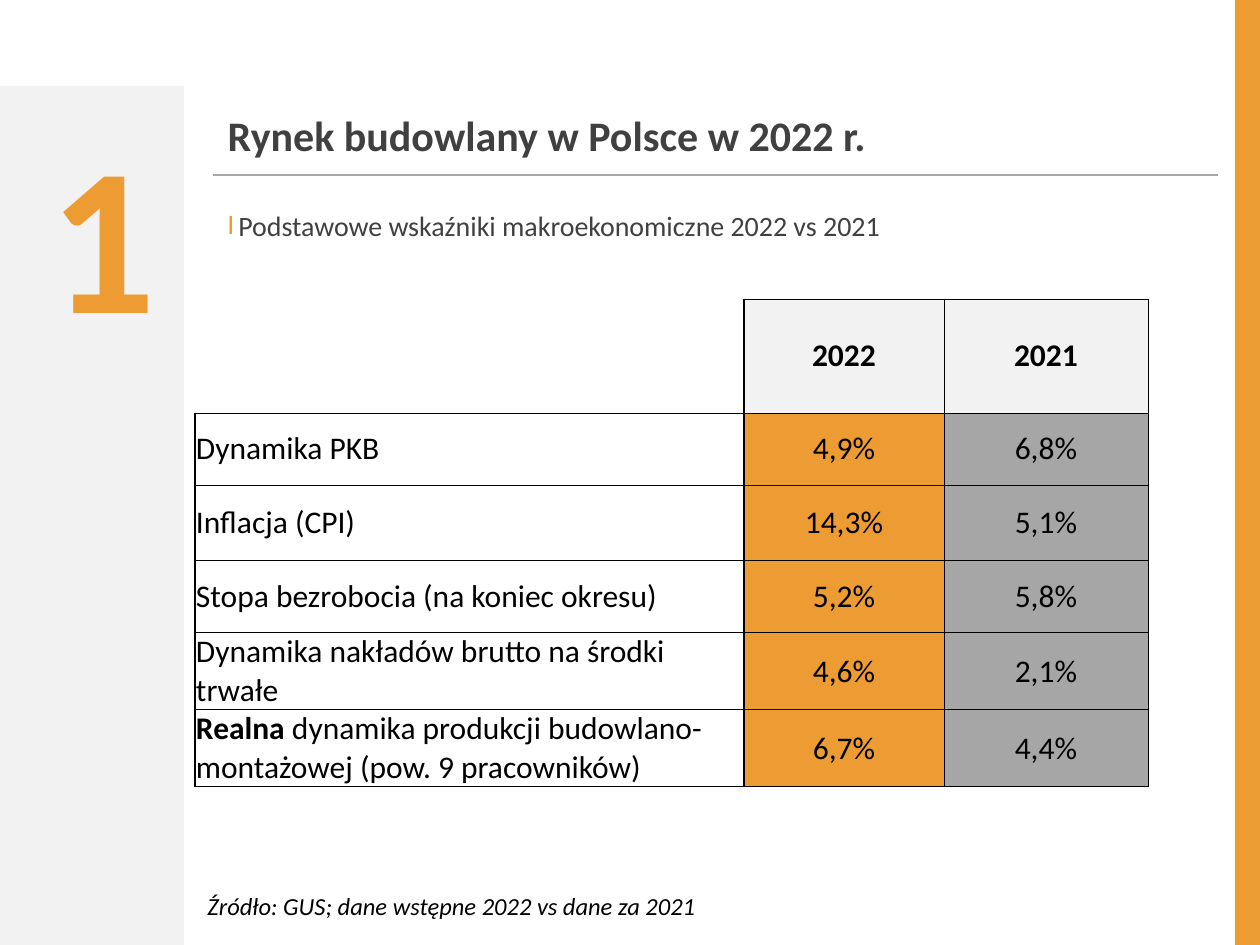
from dataclasses import dataclass

from lxml.etree import SubElement
from pptx import Presentation
from pptx.dml.color import RGBColor
from pptx.enum.shapes import MSO_CONNECTOR, MSO_SHAPE
from pptx.enum.text import MSO_ANCHOR, PP_ALIGN
from pptx.oxml import parse_xml
from pptx.oxml.ns import nsdecls, qn
from pptx.util import Emu, Pt

EMU_PER_PX = 914400 / 126


def px(length):
    return Emu(round(length * EMU_PER_PX))


@dataclass(frozen=True)
class Theme:
    font: str = "Calibri"
    accent: str = "ED9B33"
    panel: str = "F2F2F2"
    grey: str = "A6A6A6"
    heading: str = "404040"
    black: str = "000000"
    number_size: int = 120
    title_size: int = 24
    table_size: int = 18
    body_size: int = 16
    source_size: int = 14


class SlideBuilder:
    def __init__(self, deck, theme):
        self.theme = theme
        self.page = deck.slides.add_slide(deck.slide_layouts[5])

    def style(self, para, size, color, bold=False, italic=False, align=PP_ALIGN.LEFT):
        para.alignment = align
        font = para.font
        font.name = self.theme.font
        font.size = Pt(size)
        font.bold = bold
        font.italic = italic
        font.color.rgb = RGBColor.from_string(color)

    def title(self, text, left, top, width, height):
        box = self.page.shapes.title
        box.left, box.top, box.width, box.height = map(px, (left, top, width, height))
        frame = box.text_frame
        frame.text = text
        frame.vertical_anchor = MSO_ANCHOR.MIDDLE
        self.style(frame.paragraphs[0], self.theme.title_size, self.theme.heading, bold=True)

    def band(self, left, top, width, height, color):
        shape = self.page.shapes.add_shape(
            MSO_SHAPE.RECTANGLE, *map(px, (left, top, width, height)))
        shape.shadow.inherit = False
        shape.fill.solid()
        shape.fill.fore_color.rgb = RGBColor.from_string(color)
        shape.line.fill.background()

    def rule(self, left, right, top):
        line = self.page.shapes.add_connector(
            MSO_CONNECTOR.STRAIGHT, *map(px, (left, top, right, top)))
        line.line.color.rgb = RGBColor.from_string(self.theme.grey)
        line.line.width = Pt(0.75)
        SubElement(line._element.spPr, qn("a:effectLst"))

    def text(self, text, left, top, width, height, size, color, bullet=None, **look):
        box = self.page.shapes.add_textbox(*map(px, (left, top, width, height)))
        frame = box.text_frame
        frame.word_wrap = True
        para = frame.paragraphs[0]
        para.text = text
        if bullet:
            self.bullet(para, bullet)
        self.style(para, size, color, **look)

    def bullet(self, para, character):
        properties = para._p.get_or_add_pPr()
        indent = px(11)
        properties.set("marL", str(indent))
        properties.set("indent", str(-indent))
        color = SubElement(properties, qn("a:buClr"))
        SubElement(color, qn("a:srgbClr"), val=self.theme.accent)
        SubElement(properties, qn("a:buFont"), typeface=self.theme.font)
        SubElement(properties, qn("a:buChar"), char=character)

    def borders(self, cell, **widths):
        properties = cell._tc.get_or_add_tcPr()
        for position, side in enumerate("LRTB"):
            width = widths.get(side, 0)
            paint = (f'<a:solidFill><a:srgbClr val="{self.theme.black}"/></a:solidFill>'
                     if width else "<a:noFill/>")
            properties.insert(position, parse_xml(
                f'<a:ln{side} {nsdecls("a")} w="{Pt(width)}">{paint}</a:ln{side}>'))

    def cell(self, cell, spans, fill, bold, align):
        cell.vertical_anchor = MSO_ANCHOR.MIDDLE
        cell.margin_left = cell.margin_right = px(1)
        cell.margin_top = cell.margin_bottom = 0
        if fill:
            cell.fill.solid()
            cell.fill.fore_color.rgb = RGBColor.from_string(fill)
        else:
            cell.fill.background()
        para = cell.text_frame.paragraphs[0]
        self.style(para, self.theme.table_size, self.theme.black, bold=bold, align=align)
        for text, strong in spans:
            span = para.add_run()
            span.text = text
            if strong:
                span.font.bold = True

    def table(self, rows, left, top, widths, heights):
        frame = self.page.shapes.add_table(
            len(heights), len(widths), *map(px, (left, top, sum(widths), sum(heights))))
        table = frame.table
        table.first_row = table.horz_banding = False
        for column, width in zip(table.columns, widths):
            column.width = px(width)
        for row, height in zip(table.rows, heights):
            row.height = px(height)
        value_fills = (None, self.theme.accent, self.theme.grey)
        for r, row in enumerate(rows):
            for c, content in enumerate(row):
                spans = [(content, False)] if isinstance(content, str) else content
                header = r == 0
                fill = self.theme.panel if header and c else value_fills[c]
                align = PP_ALIGN.CENTER if c else PP_ALIGN.LEFT
                cell = table.cell(r, c)
                self.cell(cell, spans, fill, header, align)
                if header and c == 0:
                    self.borders(cell, R=1, B=0.5)
                else:
                    self.borders(cell, L=1 if c < 2 else 0.5, R=1 if c == 0 else 0.5,
                                 T=0.5, B=0.5)


INDICATORS = [
    ("", "2022", "2021"),
    ("Dynamika PKB", "4,9%", "6,8%"),
    ("Inflacja (CPI)", "14,3%", "5,1%"),
    ("Stopa bezrobocia (na koniec okresu)", "5,2%", "5,8%"),
    ("Dynamika nakładów brutto na środki trwałe", "4,6%", "2,1%"),
    ([("Realna", True),
      (" dynamika produkcji budowlano-montażowej (pow. 9 pracowników)", False)],
     "6,7%", "4,4%"),
]


def main():
    deck = Presentation()
    deck.slide_width, deck.slide_height = px(1260), px(945)
    theme = Theme()
    slide = SlideBuilder(deck, theme)
    slide.band(0, 86, 184, 859, theme.panel)
    slide.band(1235, 0, 25, 945, theme.accent)
    slide.rule(213, 1218, 175)
    slide.title("Rynek budowlany w Polsce w 2022 r.", 215, 95, 1005, 79)
    slide.text("1", 0, 97, 168, 291, theme.number_size, theme.accent,
               bold=True, align=PP_ALIGN.RIGHT)
    slide.text("Podstawowe wskaźniki makroekonomiczne 2022 vs 2021",
               215, 202, 1005, 60, theme.body_size, theme.heading, bullet="I")
    slide.table(INDICATORS, 195, 299, (549, 200, 204), (114, 72, 75, 73, 77, 77))
    slide.text("Źródło: GUS; dane wstępne 2022 vs dane za 2021",
               195, 885, 725, 43, theme.source_size, theme.black, italic=True)
    deck.save("out.pptx")


if __name__ == "__main__":
    main()
